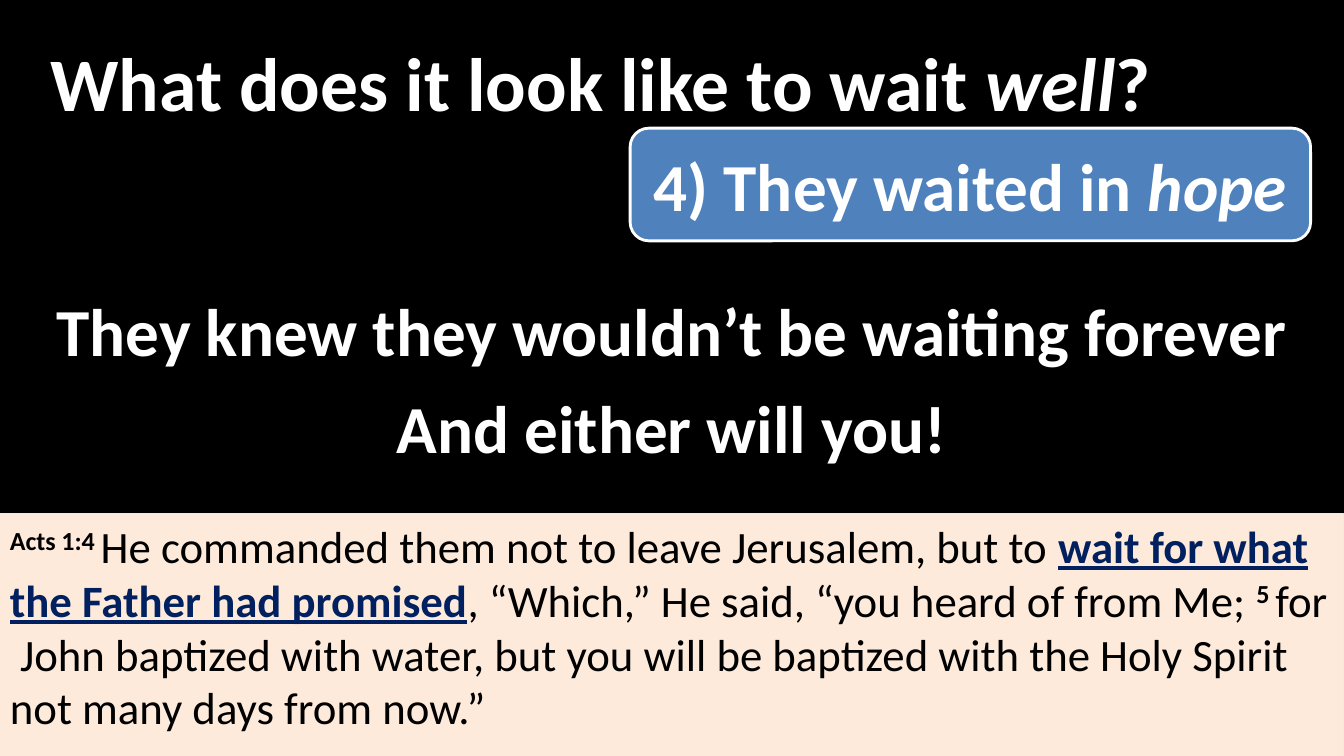
from dataclasses import dataclass

from pptx import Presentation
from pptx.dml.color import RGBColor
from pptx.enum.shapes import MSO_SHAPE
from pptx.enum.text import MSO_ANCHOR, MSO_AUTO_SIZE, PP_ALIGN
from pptx.slide import Slide
from pptx.text.text import TextFrame
from pptx.util import Cm, Pt

RECTANGLE, ROUNDED = MSO_SHAPE.RECTANGLE, MSO_SHAPE.ROUNDED_RECTANGLE
TOP, MIDDLE = MSO_ANCHOR.TOP, MSO_ANCHOR.MIDDLE
LEFT, CENTER = PP_ALIGN.LEFT, PP_ALIGN.CENTER
NO_AUTOFIT = MSO_AUTO_SIZE.NONE
TITLE_ONLY = 5
SLIDE_WIDTH, SLIDE_HEIGHT = 33.87, 19.05


@dataclass(frozen=True)
class Theme:
    font: str = "Calibri"
    background: str = "000000"
    light: str = "FFFFFF"
    dark: str = "000000"
    emphasis: str = "002060"
    badge: str = "4F81BD"
    scripture: str = "FDEADA"
    scripture_edge: str = "EEECE1"
    title_size: int = 54
    point_size: int = 48
    scripture_size: int = 32


THEME = Theme()


@dataclass(frozen=True)
class Span:
    text: str
    color: str = THEME.light
    bold: bool = True
    italic: bool = False
    underline: bool = False
    raised: bool = False


@dataclass(frozen=True)
class Panel:
    left: float
    top: float
    width: float
    height: float
    spans: tuple[Span, ...]
    size: int = THEME.point_size
    outline: int = ROUNDED
    fill: str | None = None
    edge: str | None = None
    edge_width: float = 0
    align: int = CENTER
    anchor: int = MIDDLE


def verse_text(text: str) -> Span:
    return Span(text, THEME.dark, bold=False)


def verse_number(text: str) -> Span:
    return Span(text, THEME.dark, raised=True)


TITLE = (Span("What does it look like to wait "), Span("well", italic=True), Span("?"))

SCRIPTURE = (
    verse_number("Acts 1:4 "),
    verse_text("He commanded them not to leave Jerusalem, but to "),
    Span("wait for what the Father had promised", THEME.emphasis, underline=True),
    verse_text(", “Which,” He said, “you heard of from Me; "),
    verse_number("5 "),
    verse_text("for  John baptized with water, but you will be baptized "
               "with the Holy Spirit not many days from now.”"),
)

PANELS = (
    Panel(0, 12.95, SLIDE_WIDTH, 6.12, SCRIPTURE, THEME.scripture_size, RECTANGLE,
          THEME.scripture, THEME.scripture_edge, 0.75, LEFT, TOP),
    Panel(15.88, 3.23, 17.15, 2.84,
          (Span("4) They waited in "), Span("hope", italic=True)),
          fill=THEME.badge, edge=THEME.light, edge_width=2),
    Panel(0, 6.88, SLIDE_WIDTH, 2.84,
          (Span("They knew they wouldn’t be waiting forever"),)),
    Panel(0, 9.32, SLIDE_WIDTH, 2.84, (Span("And either will you!"),)),
)


def write(frame: TextFrame, spans: tuple[Span, ...], size: int, align: int, anchor: int) -> None:
    frame.word_wrap = True
    frame.auto_size = NO_AUTOFIT
    frame.vertical_anchor = anchor
    paragraph = frame.paragraphs[0]
    paragraph.alignment = align
    paragraph.line_spacing = 1.0
    paragraph.space_before = Pt(0)
    for span in spans:
        run = paragraph.add_run()
        run.text = span.text
        font = run.font
        font.name, font.size = THEME.font, Pt(size)
        font.bold, font.italic, font.underline = span.bold, span.italic, span.underline
        font.color.rgb = RGBColor.from_string(span.color)
        if span.raised:
            run._r.get_or_add_rPr().set("baseline", "30000")


def add_title(slide: Slide) -> None:
    title = slide.shapes.title
    title.left, title.top = Cm(-2.54), Cm(0.46)
    title.width, title.height = Cm(35.36), Cm(3.18)
    write(title.text_frame, TITLE, THEME.title_size, CENTER, MIDDLE)


def add_panel(slide: Slide, panel: Panel) -> None:
    shape = slide.shapes.add_shape(panel.outline, Cm(panel.left), Cm(panel.top),
                                   Cm(panel.width), Cm(panel.height))
    shape.shadow.inherit = False
    if panel.fill:
        shape.fill.solid()
        shape.fill.fore_color.rgb = RGBColor.from_string(panel.fill)
    else:
        shape.fill.background()
    if panel.edge:
        shape.line.color.rgb = RGBColor.from_string(panel.edge)
        shape.line.width = Pt(panel.edge_width)
    else:
        shape.line.fill.background()
    write(shape.text_frame, panel.spans, panel.size, panel.align, panel.anchor)


def main() -> None:
    deck = Presentation()
    deck.slide_width, deck.slide_height = Cm(SLIDE_WIDTH), Cm(SLIDE_HEIGHT)
    slide = deck.slides.add_slide(deck.slide_layouts[TITLE_ONLY])

    # Black backdrop
    slide.background.fill.solid()
    slide.background.fill.fore_color.rgb = RGBColor.from_string(THEME.background)

    # Question, then scripture, badge and statements
    add_title(slide)
    for panel in PANELS:
        add_panel(slide, panel)

    deck.save("out.pptx")


if __name__ == "__main__":
    main()
